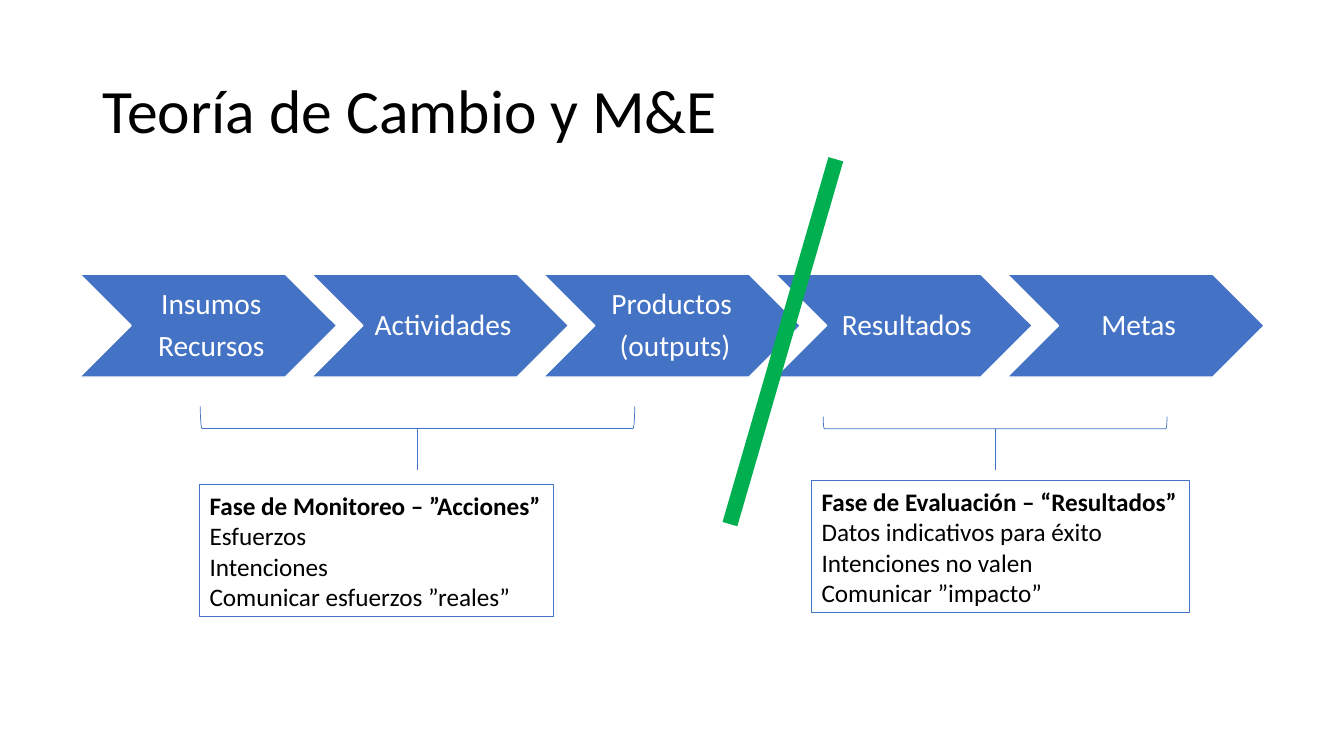
from dataclasses import dataclass

from lxml import etree
from pptx import Presentation
from pptx.dml.color import RGBColor
from pptx.enum.shapes import MSO_CONNECTOR, MSO_SHAPE
from pptx.enum.text import MSO_ANCHOR, MSO_AUTO_SIZE, PP_ALIGN
from pptx.oxml.ns import qn
from pptx.util import Inches, Pt

BLUE = RGBColor(0x44, 0x72, 0xC4)
GREEN = RGBColor(0x00, 0xB0, 0x50)
BLACK = RGBColor(0, 0, 0)
WHITE = RGBColor(0xFF, 0xFF, 0xFF)
FONT = "Calibri"
CHEVRON, RECT, BRACKET = MSO_SHAPE.CHEVRON, MSO_SHAPE.RECTANGLE, MSO_SHAPE.RIGHT_BRACKET
STRAIGHT = MSO_CONNECTOR.STRAIGHT
MIDDLE = MSO_ANCHOR.MIDDLE
LEFT, CENTER = PP_ALIGN.LEFT, PP_ALIGN.CENTER
NO_FIT, GROW = MSO_AUTO_SIZE.NONE, MSO_AUTO_SIZE.SHAPE_TO_FIT_TEXT

prs = Presentation()
prs.slide_width, prs.slide_height = Inches(13.33), Inches(7.5)
s = prs.slides.add_slide(prs.slide_layouts[6])


# Lengths are percentages of the slide's width (x) and height (y)
def x(share: float) -> int:
    return round(prs.slide_width * share / 100)


def y(share: float) -> int:
    return round(prs.slide_height * share / 100)


STEP_LEFT, STEP_TOP, STEP_W, STEP_H, STEP_PITCH = 5.93, 36.27, 19.13, 13.6, 17.25
BRACKET_BOTTOM, STEM_BOTTOM = 56.7, 62.13
BOX_H = 17.47


@dataclass
class Phase:
    left: float
    top: float
    width: float
    bracket_center: float
    bracket_length: float
    bracket_depth: float
    heading: str
    points: tuple[str, ...]


STEPS = (
    ("Insumos", "Recursos"),
    ("Actividades",),
    ("Productos ", "(outputs)"),
    ("Resultados",),
    ("Metas",),
)
PHASES = (
    Phase(14.85, 64.13, 26.33, 31.06, 32.33, 2.93, "Fase de Monitoreo – ”Acciones”",
          ("Esfuerzos", "Intenciones", "Comunicar esfuerzos ”reales”")),
    Phase(60.39, 63.6, 28.13, 74.04, 25.58, 1.6, "Fase de Evaluación – “Resultados”",
          ("Datos indicativos para éxito", "Intenciones no valen", "Comunicar ”impacto”")),
)


def add_shape(kind: MSO_SHAPE, left: int, top: int, width: int, height: int,
              line: RGBColor, weight: float, fill: RGBColor | None = None):
    sp = s.shapes.add_shape(kind, left, top, width, height)
    sp.shadow.inherit = False
    if fill is None:
        sp.fill.background()
    else:
        sp.fill.solid()
        sp.fill.fore_color.rgb = fill
    sp.line.color.rgb = line
    sp.line.width = Pt(weight)
    return sp


def add_line(x1: float, y1: float, x2: float, y2: float,
             color: RGBColor, weight: float) -> None:
    cn = s.shapes.add_connector(STRAIGHT, x(x1), y(y1), x(x2), y(y2))
    cn.line.color.rgb = color
    cn.line.width = Pt(weight)
    etree.SubElement(cn._element.spPr, qn("a:effectLst"))


def write(tf, lines: tuple[str, ...], size: float, color: RGBColor, align: PP_ALIGN,
          spacing: float = 1.0, after: float = 0, bold_first: bool = False) -> None:
    tf.vertical_anchor = MIDDLE
    for i, text in enumerate(lines):
        p = tf.add_paragraph() if i else tf.paragraphs[0]
        p.alignment = align
        p.line_spacing = spacing
        p.space_after = Pt(after)
        r = p.add_run()
        r.text = text
        r.font.name = FONT
        r.font.size = Pt(size)
        r.font.color.rgb = color
        r.font.bold = bold_first and i == 0


def add_step(index: int, lines: tuple[str, ...]) -> None:
    sp = add_shape(CHEVRON, x(STEP_LEFT + index * STEP_PITCH), y(STEP_TOP),
                   x(STEP_W), y(STEP_H), WHITE, 1, BLUE)
    tf = sp.text_frame
    tf.word_wrap = True
    tf.margin_left = Inches(0.09)
    tf.margin_top = tf.margin_right = tf.margin_bottom = Inches(0.03)
    write(tf, lines, 21, WHITE, CENTER, spacing=0.9, after=7.35)


def add_phase(phase: Phase) -> None:
    # Text box
    sp = add_shape(RECT, x(phase.left), y(phase.top), x(phase.width), y(BOX_H), BLUE, 0.75)
    tf = sp.text_frame
    tf.word_wrap = False
    tf.auto_size = GROW
    write(tf, (phase.heading, *phase.points), 18, BLACK, LEFT, bold_first=True)
    # Bracket turned to open upwards, with its stem
    depth, length = y(phase.bracket_depth), x(phase.bracket_length)
    bracket = add_shape(BRACKET, x(phase.bracket_center) - depth // 2,
                        y(BRACKET_BOTTOM) - (depth + length) // 2, depth, length, BLUE, 0.5)
    bracket.rotation = 90
    add_line(phase.bracket_center, BRACKET_BOTTOM, phase.bracket_center, STEM_BOTTOM, BLUE, 0.5)


# Title
title = s.shapes.add_textbox(x(6.9), y(5.33), x(86.27), y(19.33)).text_frame
title.word_wrap = True
title.auto_size = NO_FIT
write(title, ("Teoría de Cambio y M&E",), 44, BLACK, LEFT, spacing=0.9)

# Chain of steps
for i, step in enumerate(STEPS):
    add_step(i, step)

# Phases below the chain
for phase in PHASES:
    add_phase(phase)

# Divider between the phases
add_line(62.19, 21.07, 54.31, 69.33, GREEN, 11)

prs.save("out.pptx")
